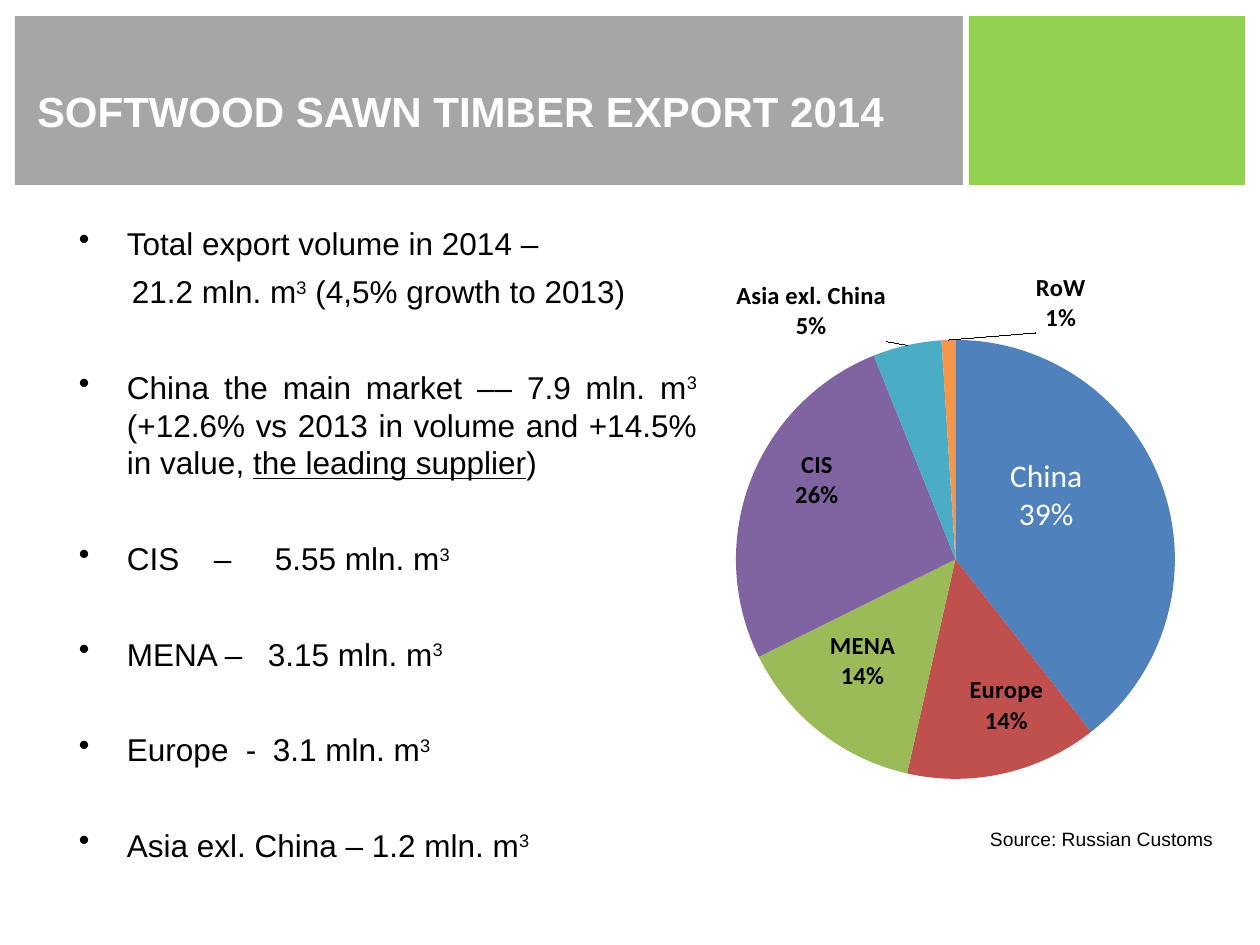
from pptx import Presentation
from pptx.chart.data import CategoryChartData
from pptx.dml.color import RGBColor
from pptx.enum.chart import XL_CHART_TYPE as ChartType, XL_LABEL_POSITION as LabelPosition
from pptx.enum.shapes import MSO_SHAPE as ShapeKind
from pptx.enum.text import MSO_ANCHOR as Anchor, PP_ALIGN as Align
from pptx.oxml import parse_xml
from pptx.oxml.ns import nsdecls, qn
from pptx.util import Emu, Pt

EMU_PER_PX = 914400 / 126
COLORS = {
    "banner": "A6A6A6", "accent": "92D050", "white": "FFFFFF", "black": "000000",
    "China": "4F81BD", "Europe": "C0504D", "MENA": "9BBB59",
    "CIS": "8064A2", "Asia exl. China": "4BACC6", "RoW": "F79646",
}
SHARES = {"China": 39, "Europe": 14, "MENA": 14, "CIS": 26, "Asia exl. China": 5, "RoW": 1}
LABEL_SHIFTS = {
    "China": (-13, -28), "Europe": (27, 39), "MENA": (-25, 15),
    "CIS": (-36, -40), "Asia exl. China": (-120, -141), "RoW": (109, -147),
}
CUBIC = ("3", "super")
FACTS = [
    {"runs": [("Total export volume in 2014 –", "")], "before": 0},
    {"runs": [("21.2 mln. m", ""), CUBIC, (" (4,5% growth to 2013)", "")],
     "before": 6, "bullet": False},
    {"runs": [("China the main market –– 7.9 mln. m", ""), CUBIC,
              (" (+12.6% vs 2013 in volume and +14.5% in value, ", ""),
              ("the leading supplier", "underline"), (")", "")]},
    {"runs": [("CIS\t–\t5.55 mln. m", ""), CUBIC], "tabs": (135, 196)},
    {"runs": [("MENA –\t3.15 mln. m", ""), CUBIC], "tabs": (189,)},
    {"runs": [("Europe\t-\t3.1 mln. m", ""), CUBIC], "tabs": (167, 194)},
    {"runs": [("Asia exl. China – 1.2 mln. m", ""), CUBIC]},
]


def px(length):
    """Turn pixels into EMU."""
    return Emu(round(length * EMU_PER_PX))


def color(name):
    """Return the named colour."""
    return RGBColor.from_string(COLORS[name])


def style_font(font, size, color_name, name="Arial", bold=False):
    """Set the look of a font."""
    font.name, font.size, font.bold = name, Pt(size), bold
    font.color.rgb = color(color_name)


def add_text_frame(slide, box, anchor=Anchor.TOP, wrap=True, inset=0):
    """Add a text box and return its text frame."""
    frame = slide.shapes.add_textbox(*map(px, box)).text_frame
    frame.word_wrap, frame.vertical_anchor = wrap, anchor
    frame.margin_left = frame.margin_right = px(inset)
    frame.margin_top = frame.margin_bottom = 0
    return frame


def add_run(paragraph, text, size, color_name, bold=False, style=""):
    """Add one styled run."""
    run = paragraph.add_run()
    run.text = text
    style_font(run.font, size, color_name, bold=bold)
    if style == "underline":
        run.font.underline = True
    elif style == "super":
        run.font._element.set("baseline", "30000")


def add_header(slide, box):
    """Draw the title banner and its accent block."""
    left, top, width, height = box
    accent_width, gap = 276, 6
    banner_width = width - accent_width - gap
    blocks = [("banner", left, banner_width),
              ("accent", left + banner_width + gap, accent_width)]
    for name, x, block_width in blocks:
        shape = slide.shapes.add_shape(
            ShapeKind.RECTANGLE, px(x), px(top), px(block_width), px(height))
        shape.shadow.inherit = False
        shape.fill.solid()
        shape.fill.fore_color.rgb = color(name)
        shape.line.fill.background()
    frame = add_text_frame(slide, (left + 10, top + 20, 923, height - 20),
                           Anchor.MIDDLE, inset=12)
    add_run(frame.paragraphs[0], "SOFTWOOD SAWN TIMBER EXPORT 2014", 24, "white", True)


def add_facts(slide, box):
    """Write the list of export facts."""
    frame = add_text_frame(slide, box, inset=5)
    for index, fact in enumerate(FACTS):
        paragraph = frame.paragraphs[0] if index == 0 else frame.add_paragraph()
        paragraph.alignment = Align.JUSTIFY
        paragraph.space_before = Pt(fact.get("before", 33))
        properties = paragraph._p.get_or_add_pPr()
        bulleted = fact.get("bullet", True)
        properties.set("marL", str(px(48 if bulleted else 53)))
        properties.set("indent", str(px(-48 if bulleted else 0)))
        if bulleted:
            properties.append(parse_xml(f'<a:buChar {nsdecls("a")} char="•"/>'))
        if "tabs" in fact:
            stops = "".join(f'<a:tab pos="{px(stop)}" algn="l"/>' for stop in fact["tabs"])
            properties.append(parse_xml(f'<a:tabLst {nsdecls("a")}>{stops}</a:tabLst>'))
        for text, style in fact["runs"]:
            add_run(paragraph, text, 18, "black", style=style)


def manual_layout(x, y, size=None):
    """Return a chart layout element from fractions of the chart box."""
    values = {"x": x, "y": y}
    modes = ""
    if size:
        values.update(w=size[0], h=size[1])
        modes = ('<c:layoutTarget val="inner"/>'
                 '<c:xMode val="edge"/><c:yMode val="edge"/>')
    numbers = "".join(f'<c:{key} val="{value:.4f}"/>' for key, value in values.items())
    return parse_xml(f'<c:layout {nsdecls("c")}><c:manualLayout>{modes}{numbers}'
                     '</c:manualLayout></c:layout>')


def place_label(label, shift, box):
    """Show category and percentage, moved from the slice centre."""
    label.position = LabelPosition.CENTER
    element = label._dLbl
    for tag, value in (("showVal", "0"), ("showCatName", "1"), ("showPercent", "1")):
        element.find(qn(f"c:{tag}")).set("val", value)
    element.append(parse_xml(f'<c:separator {nsdecls("c")}>\n</c:separator>'))
    element.insert(1, manual_layout(shift[0] / box[2], shift[1] / box[3]))


def add_share_chart(slide, box):
    """Draw the pie of export shares."""
    data = CategoryChartData()
    data.categories = list(SHARES)
    data.add_series("Series 1", list(SHARES.values()))
    chart = slide.shapes.add_chart(ChartType.PIE, *map(px, box), data).chart
    chart.has_legend = chart.has_title = False
    style_font(chart.font, 10, "black", "Calibri")
    plot = chart.plots[0]
    plot.vary_by_categories = True
    series = plot.series[0]
    labels = series.data_labels
    labels.show_value = False
    labels.show_category_name = labels.show_percentage = True
    labels.number_format, labels.number_format_is_linked = "0%", False
    style_font(labels.font, 14, "black", "Calibri", True)
    labels._element.find(qn("c:showLeaderLines")).set("val", "1")
    for index, name in enumerate(SHARES):
        point = series.points[index]
        point.format.fill.solid()
        point.format.fill.fore_color.rgb = color(name)
        label = point.data_label
        first = index == 0
        style_font(label.font, 18 if first else 14, "white" if first else "black",
                   "Calibri", not first)
        place_label(label, LABEL_SHIFTS[name], box)
    plot_area = chart._chartSpace.chart.plotArea
    for layout in plot_area.findall(qn("c:layout")):
        plot_area.remove(layout)
    plot_area.insert(0, manual_layout(223 / box[2], 85 / box[3],
                                      (439 / box[2], 439 / box[3])))


def add_source(slide, box):
    """Write the source line."""
    frame = add_text_frame(slide, box, Anchor.MIDDLE, wrap=False, inset=12)
    add_run(frame.paragraphs[0], "Source: Russian Customs", 11, "black")


def main():
    """Build and save the slide."""
    presentation = Presentation()
    presentation.slide_width, presentation.slide_height = px(1260), px(945)
    slide = presentation.slides.add_slide(presentation.slide_layouts[6])
    add_header(slide, (15, 16, 1230, 169))
    add_share_chart(slide, (513, 255, 902, 605))
    add_facts(slide, (74, 224, 628, 699))
    add_source(slide, (978, 820, 249, 37))
    presentation.save("out.pptx")


if __name__ == "__main__":
    main()
